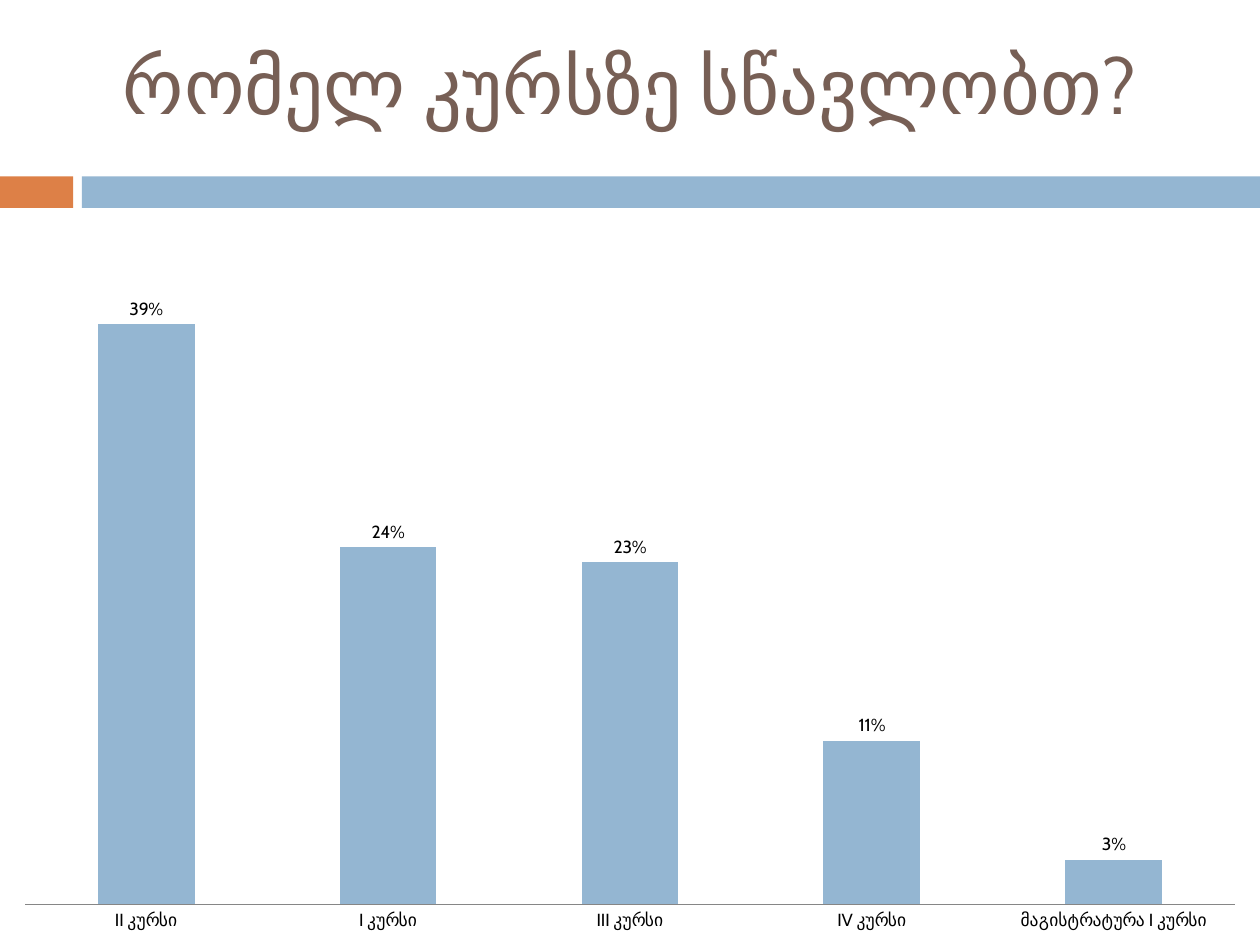
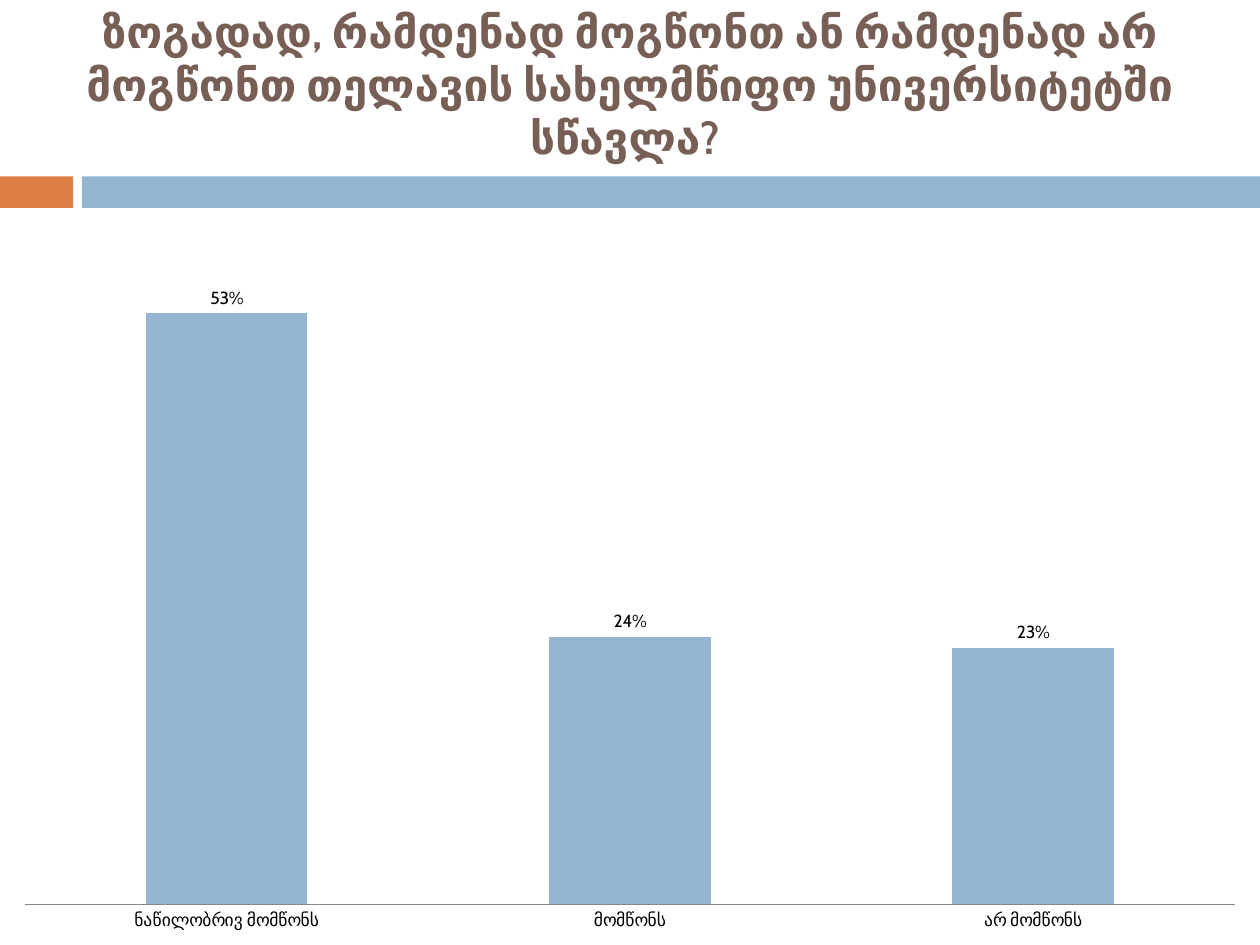
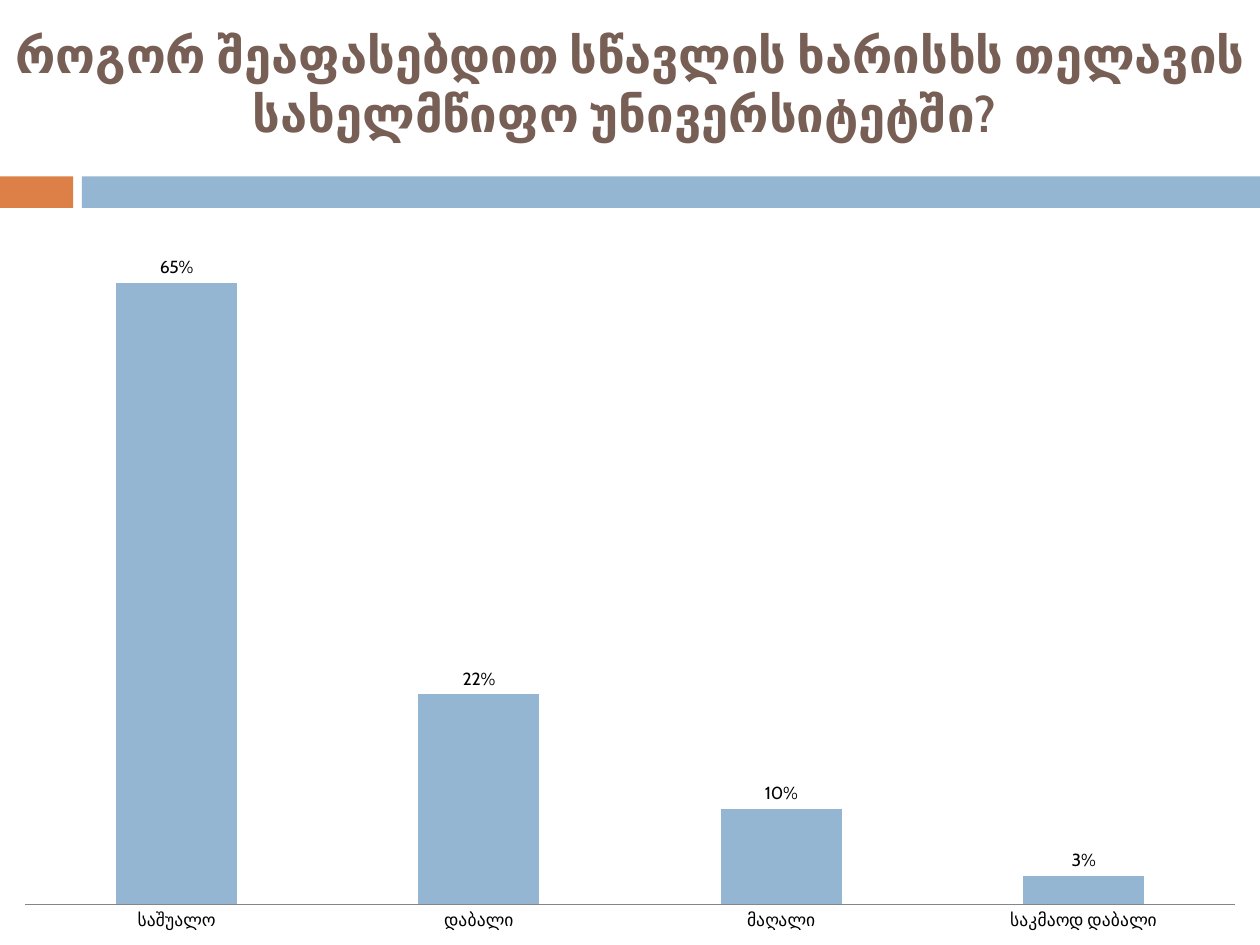
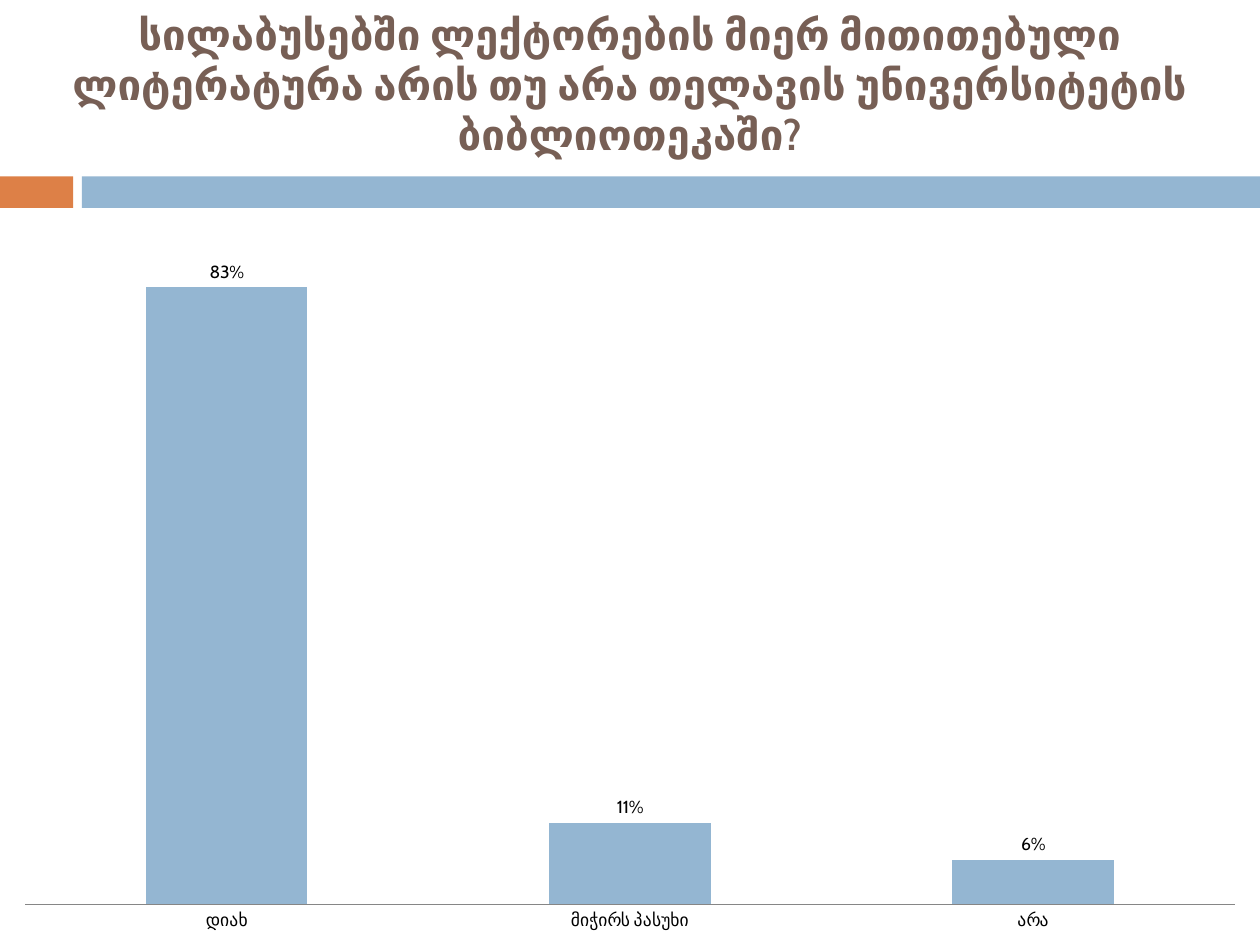
from pptx import Presentation
from pptx.chart.data import CategoryChartData
from pptx.dml.color import RGBColor
from pptx.enum.chart import XL_CHART_TYPE, XL_LABEL_POSITION, XL_TICK_MARK
from pptx.enum.shapes import MSO_SHAPE
from pptx.enum.text import MSO_ANCHOR, PP_ALIGN
from pptx.util import Pt

SCALE = 9144
FONT = "Cabin"
COLORS = {
    "accent": "DD8047",
    "band": "94B6D2",
    "title": "775F55",
    "text": "000000",
    "axis": "868686",
}
BANDS = [(0, 58, "accent"), (65, 935, "band")]
SLIDES = [
    ("რომელ კურსზე სწავლობთ?", 44, False, 0.45,
     {"II კურსი": 0.39, "I კურსი": 0.24, "III კურსი": 0.23,
      "IV კურსი": 0.11, "მაგისტრატურა I კურსი": 0.03}),
    ("ზოგადად, რამდენად მოგწონთ ან რამდენად არ მოგწონთ თელავის "
     "სახელმწიფო უნივერსიტეტში სწავლა? ", 25.2, True, 0.6,
     {"ნაწილობრივ მომწონს": 0.53, "მომწონს": 0.24, "არ მომწონს": 0.23}),
    ("როგორ შეაფასებდით სწავლის ხარისხს თელავის სახელმწიფო "
     "უნივერსიტეტში? ", 28, True, 0.7,
     {"საშუალო": 0.65, "დაბალი": 0.22, "მაღალი": 0.1, "საკმაოდ დაბალი": 0.03}),
    ("სილაბუსებში ლექტორების მიერ მითითებული ლიტერატურა არის თუ არა "
     "თელავის უნივერსიტეტის ბიბლიოთეკაში?", 24, True, 0.9,
     {"დიახ": 0.83, "მიჭირს პასუხი": 0.11, "არა": 0.06}),
]


def box(*px):
    return [n * SCALE for n in px]


def color(name):
    return RGBColor.from_string(COLORS[name])


deck = Presentation()
deck.slide_width, deck.slide_height = box(1000, 750)

for title, size, bold, top, data in SLIDES:
    slide = deck.slides.add_slide(deck.slide_layouts[6])

    for left, width, fill in BANDS:
        band = slide.shapes.add_shape(MSO_SHAPE.RECTANGLE, *box(left, 140, width, 25))
        band.shadow.inherit = False
        band.fill.solid()
        band.fill.fore_color.rgb = color(fill)
        band.line.fill.background()

    frame = slide.shapes.add_textbox(*box(0, 0, 1000, 133)).text_frame
    frame.word_wrap = True
    frame.vertical_anchor = MSO_ANCHOR.MIDDLE
    head = frame.paragraphs[0]
    head.text = title
    head.alignment = PP_ALIGN.CENTER
    head.font.name = FONT
    head.font.size = Pt(size)
    head.font.bold = bold
    head.font.color.rgb = color("title")

    table = CategoryChartData(number_format="0%")
    table.categories = list(data)
    table.add_series("Series 1", list(data.values()))
    chart = slide.shapes.add_chart(
        XL_CHART_TYPE.COLUMN_CLUSTERED, *box(0, 175, 1000, 575), table).chart
    chart.has_legend = False
    chart.has_title = False
    chart.font.name = FONT
    chart.font.size = Pt(10)
    chart.font.color.rgb = color("text")

    plot = chart.plots[0]
    plot.gap_width = 150
    plot.overlap = -25
    plot.vary_by_categories = False
    bars = plot.series[0].format.fill
    bars.solid()
    bars.fore_color.rgb = color("band")

    plot.has_data_labels = True
    labels = plot.data_labels
    labels.show_value = True
    labels.number_format = "0%"
    labels.number_format_is_linked = False
    labels.position = XL_LABEL_POSITION.OUTSIDE_END

    base = chart.category_axis
    base.major_tick_mark = XL_TICK_MARK.NONE
    base.format.line.color.rgb = color("axis")
    base.format.line.width = Pt(0.75)
    scale = chart.value_axis
    scale.minimum_scale = 0
    scale.maximum_scale = top
    scale.has_major_gridlines = False
    scale.tick_labels.number_format = "0%"
    scale.tick_labels.number_format_is_linked = False
    scale.visible = False

deck.save("out.pptx")
